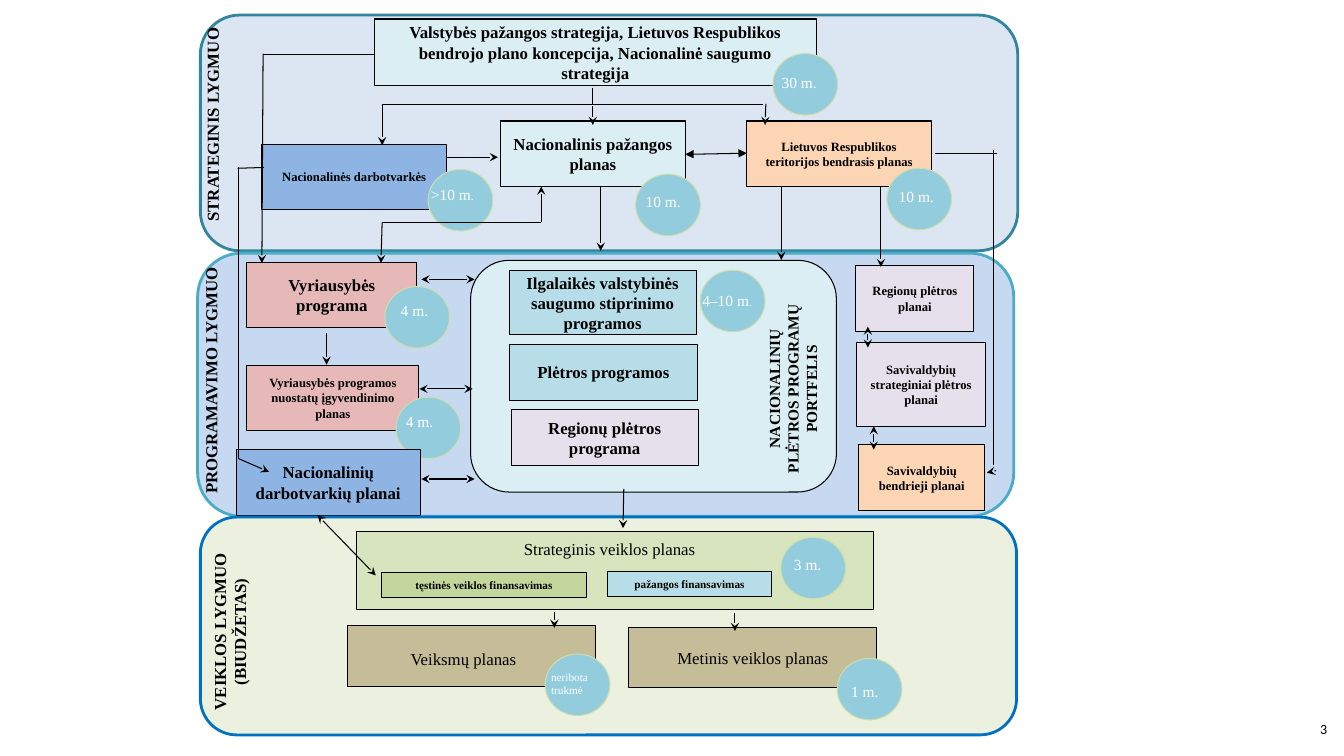
import collections

import lxml.etree
import pptx
import pptx.dml.color
import pptx.enum.shapes
import pptx.enum.text
import pptx.oxml.ns
import pptx.util

Cm = pptx.util.Cm
Shape = pptx.enum.shapes.MSO_SHAPE
Align = pptx.enum.text.PP_ALIGN
Anchor = pptx.enum.text.MSO_ANCHOR
Box = collections.namedtuple("Box", "left top width height")

SERIF = "Times New Roman"
BLACK, WHITE = "000000", "FFFFFF"
ICE, AQUA, PEACH, BLUE = "DBEEF4", "B7DEE8", "FCD5B5", "8EB4E3"
ROSE, LILAC, SAND = "E6B9B8", "E6E0EC", "C4BD97"


def color(code):
    return pptx.dml.color.RGBColor.from_string(code)


def inside(box, left, top, width, height):
    """Return a box whose corner is measured from the corner of another."""
    return Box(box.left + left, box.top + top, width, height)


def write(shape, text, size, bold=False, ink=BLACK, align=Align.CENTER, font=SERIF):
    shape.text_frame.word_wrap = True
    para = shape.text_frame.paragraphs[0]
    para.text = text
    para.alignment = align
    para.font.name = font
    para.font.size = pptx.util.Pt(size)
    para.font.bold = bold
    para.font.color.rgb = color(ink)
    return para


def add_panel(page, box, fill, line=BLACK, weight=0.75, kind=Shape.RECTANGLE):
    panel = page.shapes.add_shape(kind, *map(Cm, box))
    panel.shadow.inherit = False
    panel.fill.solid()
    panel.fill.fore_color.rgb = color(fill)
    panel.line.color.rgb = color(line)
    panel.line.width = pptx.util.Pt(weight)
    return panel


def add_plan(page, box, fill, text, size=12, bold=True):
    plan = add_panel(page, box, fill)
    plan.text_frame.vertical_anchor = Anchor.MIDDLE
    write(plan, text, size, bold)


def add_caption(page, box, text, size=12, **style):
    caption = page.shapes.add_textbox(*map(Cm, box))
    return caption, write(caption, text, size, **style)


def add_side_label(page, box, text, size=12):
    """Write a bold label that reads from bottom to top."""
    label, _ = add_caption(page, box, text, size, bold=True)
    label.text_frame._txBody.bodyPr.set("vert", "vert270")


def add_term(page, box, left, top, text, shift, size=11, width=1.93, small_end=""):
    """Draw a duration circle, its text shifted from the circle's corner."""
    circle = inside(box, left, top, 1.63, 1.55)
    add_panel(page, circle, "93CDDD", "CDDDAC", kind=Shape.OVAL)
    _, para = add_caption(page, inside(circle, *shift, width, 0.89), text, size,
                          ink=WHITE, align=Align.LEFT)
    if small_end:
        span = para.add_run()
        span.text = small_end
        span.font.size = pptx.util.Pt(8)


def add_link(page, box, ends, head=None, tail=None):
    x1, y1, x2, y2 = ends
    link = page.shapes.add_connector(
        pptx.enum.shapes.MSO_CONNECTOR.STRAIGHT,
        Cm(box.left + x1), Cm(box.top + y1), Cm(box.left + x2), Cm(box.top + y2))
    link.line.color.rgb = color(BLACK)
    link.line.width = pptx.util.Pt(0.75)
    qn = pptx.oxml.ns.qn
    outline = link.line._get_or_add_ln()
    for tag, arrow in (("a:headEnd", head), ("a:tailEnd", tail)):
        if arrow:
            lxml.etree.SubElement(outline, qn(tag), type=arrow)
    lxml.etree.SubElement(link._element.spPr, qn("a:effectLst"))


def add_strategic_level(page, box):
    add_panel(page, box, "DCE6F2", "31859C", 2, Shape.ROUNDED_RECTANGLE)
    add_side_label(page, inside(box, -0.08, -0.18, 1.22, 5.89), "STRATEGINIS LYGMUO")
    add_plan(page, inside(box, 4.39, 0.1, 11.13, 1.68), ICE,
             "Valstybės pažangos strategija, Lietuvos Respublikos bendrojo plano "
             "koncepcija, Nacionalinė saugumo strategija")
    for left, top, fill, text, size in (
            (7.57, 2.67, ICE, "Nacionalinis pažangos planas", 12),
            (13.77, 2.67, PEACH, "Lietuvos Respublikos teritorijos bendrasis planas", 9),
            (1.55, 3.25, BLUE, "Nacionalinės darbotvarkės", 9)):
        add_plan(page, inside(box, left, top, 4.65, 1.65), fill, text, size)
    add_term(page, box, 14.43, 0.97, "30 m.", (-0.03, 0.36))
    add_term(page, box, 5.74, 3.89, ">10 m", (-0.18, 0.28), small_end=".")
    add_term(page, box, 10.97, 4.01, "10 m.", (0, 0.33))
    add_term(page, box, 17.3, 3.86, "10 m.", (0.05, 0.36))


def add_portfolio(page, box):
    add_panel(page, box, ICE, kind=Shape.ROUNDED_RECTANGLE)
    add_side_label(page, inside(box, 7.29, 0.79, 1.7, 4.9),
                   "NACIONALINIŲ PLĖTROS PROGRAMŲ PORTFELIS", 11)
    add_term(page, box, 5.79, 0.25, "4–10 m", (-0.2, 0.41), width=2.24, small_end=".")
    for left, top, height, fill, text in (
            (0.97, 0.25, 1.63, AQUA, "Ilgalaikės valstybinės saugumo stiprinimo programos"),
            (0.99, 2.11, 1.42, AQUA, "Plėtros programos"),
            (1.02, 3.76, 1.42, LILAC, "Regionų plėtros programa")):
        add_plan(page, inside(box, left, top, 4.72, height), fill, text)


def add_programming_level(page, box):
    add_panel(page, box, "C6D9F1", "4BACC6", 2, Shape.ROUNDED_RECTANGLE)
    add_side_label(page, inside(box, -0.05, -0.05, 1.22, 6.53), "PROGRAMAVIMO LYGMUO")
    add_plan(page, inside(box, 1.24, 2.82, 4.34, 1.65), ROSE,
             "Vyriausybės programos nuostatų įgyvendinimo planas", 9)
    add_term(page, box, 5, 3.63, "4 m.", (0, 0.25))
    add_plan(page, inside(box, 1.24, 0.23, 4.29, 1.65), ROSE, "Vyriausybės programa")
    add_term(page, box, 4.72, 0.84, "4 m.", (0.15, 0.25))
    add_plan(page, inside(box, 0.97, 4.95, 4.65, 1.65), BLUE,
             "Nacionalinių darbotvarkių planai")
    add_portfolio(page, inside(box, 6.88, 0.18, 9.22, 5.84))
    for place, fill, text in (
            ((16.59, 0.3, 2.97, 1.68), LILAC, "Regionų plėtros planai"),
            ((16.61, 2.26, 3.25, 2.11), LILAC, "Savivaldybių strateginiai plėtros planai"),
            ((16.66, 4.83, 3.18, 1.65), PEACH, "Savivaldybių bendrieji planai")):
        add_plan(page, inside(box, *place), fill, text, 9)


def add_activity_level(page, box):
    add_panel(page, box, "EBF1DE", "0070C0", 2, Shape.ROUNDED_RECTANGLE)
    add_side_label(page, inside(box, 0.1, -0.05, 1.83, 5.89), "VEIKLOS LYGMUO (BIUDŽETAS)")
    add_panel(page, inside(box, 3.94, 0.36, 13.03, 1.96), "D7E4BD")
    add_caption(page, inside(box, 6.2, 0.41, 8.23, 0.89), "Strateginis veiklos planas")
    add_plan(page, inside(box, 4.57, 1.4, 5.16, 0.64), "C3D69B",
             "tęstinės veiklos finansavimas", 8)
    add_plan(page, inside(box, 10.26, 1.37, 4.14, 0.64), AQUA, "pažangos finansavimas", 8)
    add_term(page, box, 14.63, 0.51, "3 m.", (0.08, 0.33))
    add_panel(page, inside(box, 3.71, 2.74, 6.25, 1.52), SAND)
    add_caption(page, inside(box, 3.76, 3.18, 5.74, 0.89), "Veiksmų planas")
    add_term(page, box, 8.69, 3.45, "neribota trukmė", (-0.1, 0.28), 8)
    add_plan(page, inside(box, 10.8, 2.79, 6.25, 1.5), SAND, "Metinis veiklos planas",
             bold=False)
    add_term(page, box, 16.05, 3.56, "1 m.", (0.1, 0.48))


def add_links(page, box):
    lines = (
        (14.94, 2.21, 14.94, 2.64), (9.63, 2.64, 19.23, 2.64), (6.63, 1.37, 9.45, 1.37),
        (9.63, 5.61, 13.64, 5.61), (25.04, 3.78, 25.04, 11.71), (23.57, 3.86, 25.12, 3.86),
        (5.99, 4.24, 6.65, 4.22), (6.02, 4.22, 6.02, 11.56))
    arrows = (
        (9.63, 2.64, 9.63, 3.66), (14.94, 2.67, 14.94, 3.15), (19.3, 2.62, 19.28, 3.15),
        (6.63, 1.35, 6.6, 6.63), (8.23, 8.38, 8.23, 9.19), (22.2, 4.7, 22.2, 6.73),
        (13.64, 5.59, 13.64, 4.7), (9.63, 5.61, 9.6, 6.63), (11.25, 3.96, 12.55, 3.96),
        (15.14, 4.72, 15.14, 6.32), (15.72, 12.32, 15.7, 13.31),
        (13.97, 15.42, 13.97, 15.82), (25.1, 11.86, 24.87, 11.91),
        (19.69, 4.7, 19.69, 6.55), (18.52, 15.44, 18.52, 15.9), (6.02, 11.56, 6.78, 11.89))
    two_way = (
        (10.62, 7.04, 11.96, 7.04), (10.57, 9.8, 11.91, 9.8), (22.02, 11.33, 22.02, 10.74),
        (21.87, 8.23, 21.87, 8.76), (10.62, 12.07, 11.96, 12.07), (8, 12.98, 9.47, 14.5))
    plan_exchange = ((17.27, 3.89, 18.82, 3.86),)
    for group, head, tail in (
            (lines, None, None), (arrows, None, "stealth"),
            (two_way, "stealth", "stealth"), (plan_exchange, "triangle", "triangle")):
        for ends in group:
            add_link(page, box, ends, head, tail)


def add_page_number(page, box):
    number, _ = add_caption(page, box, "3", 10, align=Align.LEFT, font="Calibri")
    number.text_frame.word_wrap = False


def main():
    deck = pptx.Presentation()
    deck.slide_width, deck.slide_height = Cm(33.87), Cm(19.05)
    page = deck.slides.add_slide(deck.slide_layouts[6])
    add_page_number(page, Box(33.02, 18.03, 0.69, 0.69))
    add_strategic_level(page, Box(5.05, 0.38, 20.6, 5.94))
    add_programming_level(page, Box(4.98, 6.38, 20.57, 6.63))
    add_activity_level(page, Box(5.05, 13.03, 20.57, 5.49))
    add_links(page, Box(0, 0, 33.87, 19.05))
    deck.save("out.pptx")


if __name__ == "__main__":
    main()
